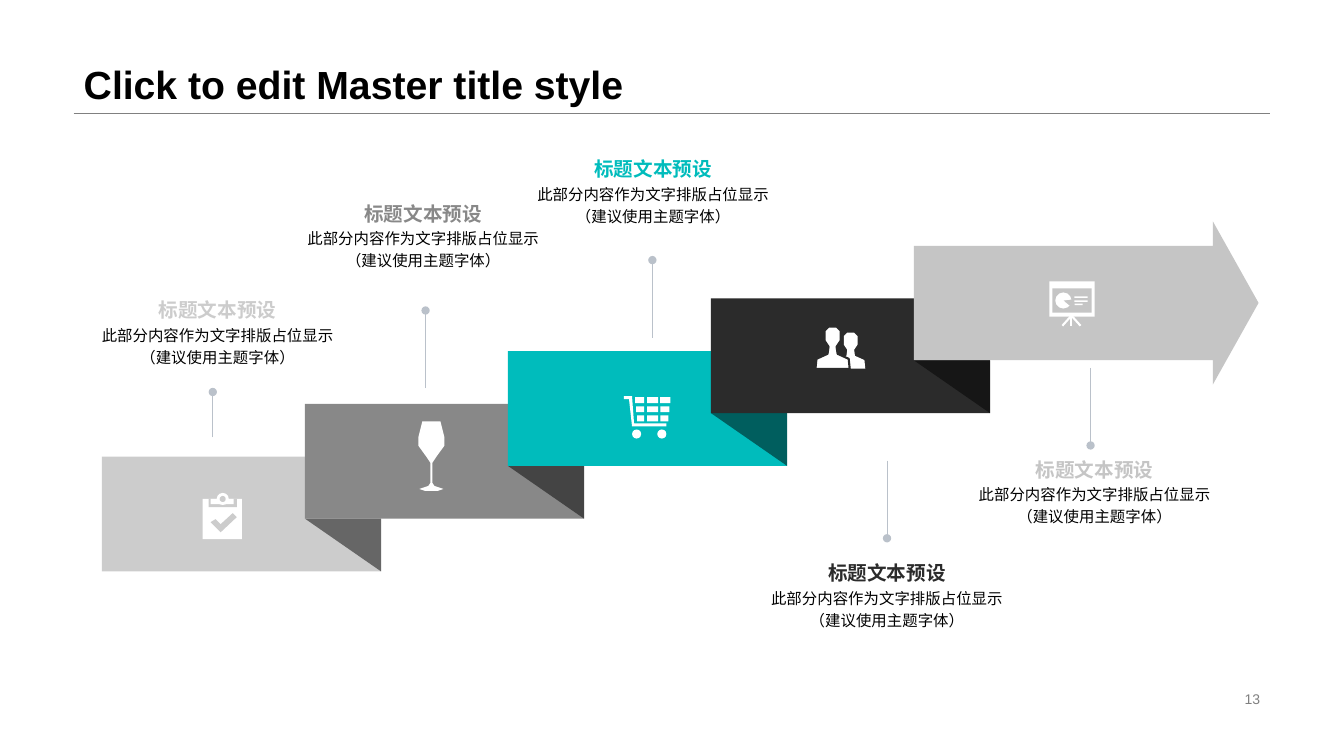
from copy import deepcopy

from lxml.etree import SubElement
from pptx import Presentation
from pptx.dml.color import RGBColor
from pptx.enum.shapes import MSO_CONNECTOR, MSO_SHAPE
from pptx.enum.text import MSO_ANCHOR, MSO_AUTO_SIZE, PP_ALIGN
from pptx.oxml.ns import qn
from pptx.util import Pt

TITLE = "Click to edit Master title style"
PAGE_NUMBER = "13"
HEADING = "标题文本预设"
BODY = ["此部分内容作为文字排版占位显示", "（建议使用主题字体）"]

# fill, fold fill, label left and top, stem x, start and end, icon left and top
STEPS = [
    ("CCCCCC", "666666", (65.5, 213.1), (152, 312.5, 280), (144.7, 352.1)),
    ("888888", "444444", (212.4, 144), (304, 277.2, 221.8), (298.8, 301)),
    ("00BCBC", "005E5E", (376.6, 112.3), (466, 241.2, 185.8), (445.7, 283)),
    ("2B2B2B", "161616", (543.6, 401), (633.6, 329, 384.5), (583.2, 233.3)),
    ("C5C5C5", None, (691.9, 326.9), (779, 262.8, 318.2), (749.5, 201)),
]
LEFT, TOP, STEP, RISE = 72.8, 326.2, 145, 37.7
RIBBON_WIDTH, RIBBON_HEIGHT = 199.4, 82
ARROW_WIDTH, ARROW_HEIGHT = 246.2, 116.6
STEM_COLOR, WHITE = "BAC1CA", "FFFFFF"

# Icons use a grid of 0.72 pt; profiles are right halves, as distance from the axis and height.
GRID = 0.72
GLASS = [(9, 0), (13, 16), (13, 24), (5, 35), (1, 41), (1, 61), (3, 64), (12, 67), (6, 69)]
BUST = [(4, 0), (8, 4), (8, 14), (4, 20), (5, 27), (16, 32), (17, 42)]
CHECK = [(8, 29), (13, 26), (18, 31), (30, 20), (34, 24), (18, 39)]
CART = [(0, 0), (8, 0), (10, 27), (42, 27), (42, 30), (8, 30), (5, 3), (0, 3)]


def rgb(color):
    return RGBColor.from_string(color)


def paint(shape, color):
    shape.fill.solid()
    shape.fill.fore_color.rgb = rgb(color)
    shape.line.fill.background()
    shape.shadow.inherit = False
    return shape


def add_preset(kind, box, color):
    return paint(slide.shapes.add_shape(kind, *map(Pt, box)), color)


def add_polygon(points, color):
    scaled = [(100 * x, 100 * y) for x, y in points]
    builder = slide.shapes.build_freeform(*scaled[0], scale=Pt(0.01))
    builder.add_line_segments(scaled[1:], close=True)
    return paint(builder.convert_to_shape(), color)


def on_grid(origin, points):
    return [(origin[0] + GRID * x, origin[1] + GRID * y) for x, y in points]


def add_part(origin, kind, box, color=WHITE):
    corner = on_grid(origin, [box[:2]])[0]
    return add_preset(kind, (*corner, GRID * box[2], GRID * box[3]), color)


def mirror(profile, axis, top=0, size=1):
    """Complete a right half into a symmetric outline."""
    right = [(axis + size * x, top + size * y) for x, y in profile]
    return right + [(2 * axis - x, y) for x, y in reversed(right)]


def add_line(start, end, color, width, oval=False):
    line = slide.shapes.add_connector(MSO_CONNECTOR.STRAIGHT, *map(Pt, (*start, *end)))
    line.line.color.rgb = rgb(color)
    line.line.width = Pt(width)
    if oval:
        SubElement(line._element.spPr.find(qn("a:ln")), qn("a:tailEnd"), type="oval")
    SubElement(line._element.spPr, qn("a:effectLst"))


def draw_clipboard(origin, color):
    add_part(origin, MSO_SHAPE.RECTANGLE, (0, 6, 39, 40))
    add_part(origin, MSO_SHAPE.RECTANGLE, (6, 6, 28, 8), color)
    add_part(origin, MSO_SHAPE.RECTANGLE, (8, 6, 23, 5))
    add_part(origin, MSO_SHAPE.OVAL, (14, 0, 12, 12))
    add_part(origin, MSO_SHAPE.OVAL, (17, 3, 6, 6), color)
    add_polygon(on_grid(origin, CHECK), color)


def draw_glass(origin, color):
    add_polygon(on_grid(origin, mirror(GLASS, 13)), WHITE)


def draw_cart(origin, color):
    add_polygon(on_grid(origin, CART), WHITE)
    for row in range(3):
        top = 1 + 9 * row
        for left, right in ((11 + row, 20), (23, 34), (36, 46 - row)):
            add_part(origin, MSO_SHAPE.RECTANGLE, (left, top, right - left, 6))
    for left in (8, 33):
        add_part(origin, MSO_SHAPE.OVAL, (left, 33, 9, 9))


def draw_people(origin, color):
    add_polygon(on_grid(origin, mirror(BUST, 34, 6, 0.85)), WHITE)
    front = add_polygon(on_grid(origin, mirror(BUST, 16)), WHITE)
    front.line.color.rgb = rgb(color)
    front.line.width = Pt(1.5)


def draw_flip_chart(origin, color):
    add_part(origin, MSO_SHAPE.RECTANGLE, (0, 0, 45, 35))
    add_part(origin, MSO_SHAPE.RECTANGLE, (3, 7, 39, 24), color)
    pie = add_part(origin, MSO_SHAPE.PIE, (6, 11, 16, 16))
    pie.adjustments[0], pie.adjustments[1] = 24, 212
    for top, width in ((15, 13), (19, 13), (22, 8)):
        add_part(origin, MSO_SHAPE.RECTANGLE, (25, top, width, 1.5))
    for foot in (13, 22, 31):
        add_line(*on_grid(origin, [(22, 34), (foot, 44)]), WHITE, 1.5)


def write(frame, lines, size, color, bold=False, **paragraph_format):
    """Fill the first paragraph, with line breaks between the lines."""
    paragraph = frame.paragraphs[0]
    for name, value in paragraph_format.items():
        setattr(paragraph, name, value)
    for index, text in enumerate(lines):
        if index:
            paragraph.add_line_break()
        run = paragraph.add_run()
        run.text = text
        font_format = {"name": "Arial", "size": Pt(size), "bold": bold}
        for name, value in font_format.items():
            setattr(run.font, name, value)
        run.font.color.rgb = rgb(color)
    for line_break in paragraph._p.findall(qn("a:br")):
        line_break.append(deepcopy(run._r.find(qn("a:rPr"))))


def add_text(box, lines, size, color, frame_format, **text_format):
    frame = slide.shapes.add_textbox(*map(Pt, box)).text_frame
    for name, value in frame_format.items():
        setattr(frame, name, value)
    write(frame, lines, size, color, **text_format)


presentation = Presentation()
presentation.slide_width, presentation.slide_height = Pt(960), Pt(540)
slide = presentation.slides.add_slide(presentation.slide_layouts[5])

title = slide.shapes.title
title.left, title.top, title.width, title.height = map(Pt, (52.6, 0, 854.6, 80.9))
title.text_frame.vertical_anchor = MSO_ANCHOR.BOTTOM
title.text_frame.auto_size = MSO_AUTO_SIZE.NONE
write(title.text_frame, [TITLE], 28, "000000", bold=True,
      alignment=PP_ALIGN.LEFT, line_spacing=0.9)
add_line((52.6, 80.9), (907.2, 80.9), "808080", 0.25)
add_text((678.2, 491, 229, 16.6), [PAGE_NUMBER], 10, "808080",
         {"word_wrap": True, "vertical_anchor": MSO_ANCHOR.MIDDLE}, alignment=PP_ALIGN.RIGHT)

no_margins = dict.fromkeys(("margin_left", "margin_top", "margin_right", "margin_bottom"), 0)
for index, (color, fold_color, (label_x, label_y), (stem_x, start, end), _) in enumerate(STEPS):
    x, y = LEFT + index * STEP, TOP - index * RISE
    if fold_color:
        add_preset(MSO_SHAPE.RECTANGLE, (x, y, RIBBON_WIDTH, RIBBON_HEIGHT), color)
        right, bottom = x + RIBBON_WIDTH, y + RIBBON_HEIGHT
        add_polygon([(x + STEP, bottom - RISE), (right, bottom - RISE), (right, bottom)],
                    fold_color)
    else:
        arrow_top = y - (ARROW_HEIGHT - RIBBON_HEIGHT) / 2
        arrow = add_preset(MSO_SHAPE.RIGHT_ARROW, (x, arrow_top, ARROW_WIDTH, ARROW_HEIGHT), color)
        arrow.adjustments[0], arrow.adjustments[1] = 0.7, 0.28
    add_line((stem_x, start), (stem_x, end), STEM_COLOR, 0.5, oval=True)
    add_text((label_x, label_y, 180, 17), [HEADING], 14, color,
             {**no_margins, "word_wrap": False}, bold=True, alignment=PP_ALIGN.CENTER)
    add_text((label_x, label_y + 17, 180, 52.6), BODY, 11, "000000",
             {**no_margins, "word_wrap": True}, alignment=PP_ALIGN.CENTER, line_spacing=1.2)

icon_painters = [draw_clipboard, draw_glass, draw_cart, draw_people, draw_flip_chart]
for draw_icon, (color, *_, origin) in zip(icon_painters, STEPS):
    draw_icon(origin, color)

presentation.save("out.pptx")
